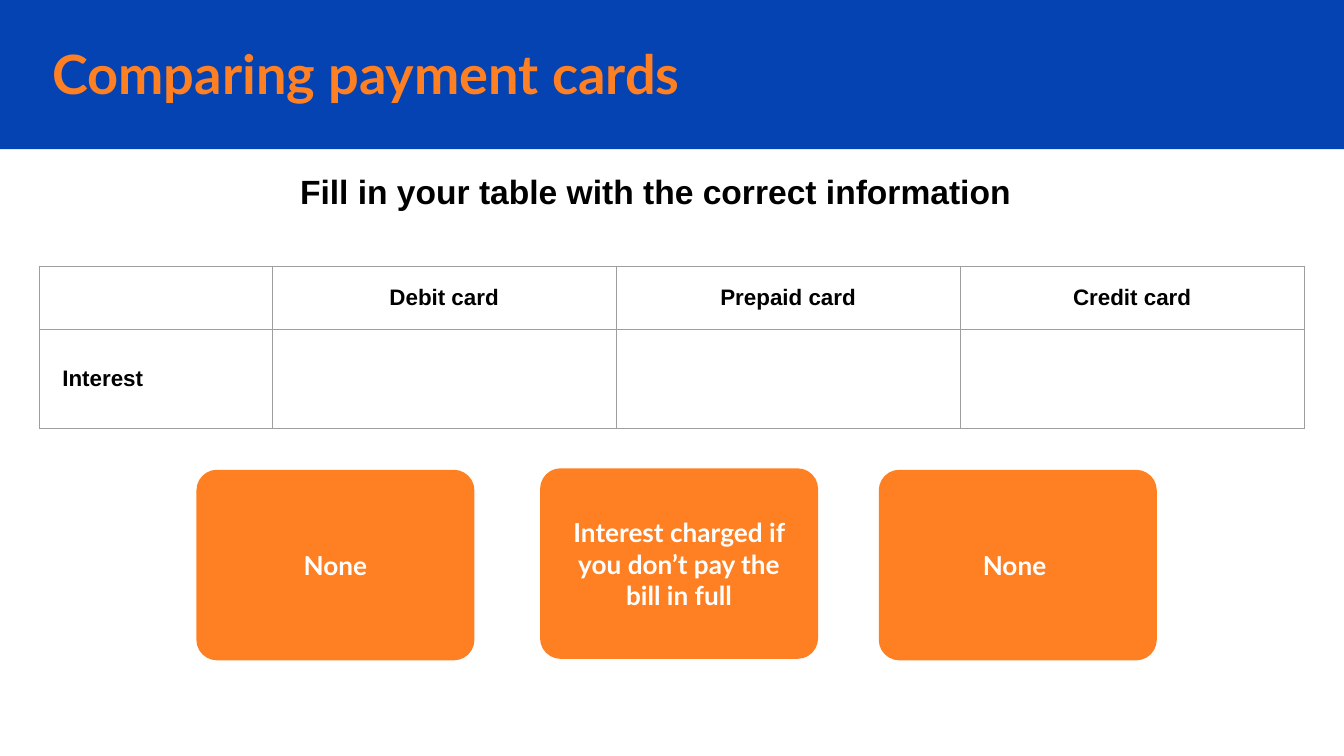
from lxml.etree import SubElement
from pptx import Presentation
from pptx.dml.color import RGBColor as RGB
from pptx.enum.shapes import MSO_SHAPE as SHAPE
from pptx.enum.text import MSO_ANCHOR as ANCHOR, PP_ALIGN as ALIGN
from pptx.oxml.ns import qn
from pptx.util import Inches, Pt

WIDTH = Inches(10)
HEIGHT = WIDTH * 9 // 16
COLORS = {"blue": "0543B3", "orange": "FF8022", "white": "FFFFFF",
          "black": "000000", "grid": "9E9E9E"}
TITLE = {"name": "Lato", "size": Pt(29), "bold": True}
PROMPT = {"name": "Arial", "size": Pt(18), "bold": True}
CELL = {"name": "Arial", "size": Pt(12), "bold": True}
CARD = {"name": "Lato", "size": Pt(14), "bold": True}
SIDES = ("left", "top", "right", "bottom")


def color(name):
    """Return a palette colour."""
    return RGB.from_string(COLORS[name])


def place(x, y, w, h):
    """Turn percentages of the slide into a box of lengths."""
    return [int(size * share / 100) for size, share in
            zip((WIDTH, HEIGHT, WIDTH, HEIGHT), (x, y, w, h))]


def set_margins(target, inset):
    """Give a text frame or table cell equal margins."""
    for side in SIDES:
        setattr(target, f"margin_{side}", Inches(inset))


def write(tf, text, style, ink, align):
    """Write one formatted paragraph."""
    p = tf.paragraphs[0]
    p.alignment = align
    r = p.add_run()
    r.text = text
    for key, value in style.items():
        setattr(r.font, key, value)
    r.font.color.rgb = color(ink)


def add_label(slide, box, text, style, ink, align, anchor):
    """Add a wrapping line of text in a box."""
    tf = slide.shapes.add_textbox(*box).text_frame
    tf.word_wrap = True
    tf.vertical_anchor = anchor
    set_margins(tf, 0.1)
    write(tf, text, style, ink, align)


def add_block(slide, kind, box, fill):
    """Add a flat filled shape without a line."""
    sp = slide.shapes.add_shape(kind, *box)
    sp.shadow.inherit = False
    sp.fill.solid()
    sp.fill.fore_color.rgb = color(fill)
    sp.line.fill.background()
    return sp


def add_header(slide, box):
    """Add the title band."""
    add_block(slide, SHAPE.RECTANGLE, box, "blue")
    x, y, w, h = box
    title_box = [x + int(w * 0.029), y + int(h * 0.24), int(w * 0.846), h // 2]
    add_label(slide, title_box, "Comparing payment cards", TITLE, "orange",
              ALIGN.LEFT, ANCHOR.MIDDLE)


def add_borders(cell):
    """Draw thin lines on all sides of a cell."""
    tc_pr = cell._tc.get_or_add_tcPr()
    for side in "LRTB":
        ln = SubElement(tc_pr, qn(f"a:ln{side}"), w=str(Pt(0.75)))
        fill = SubElement(ln, qn("a:solidFill"))
        SubElement(fill, qn("a:srgbClr"), val=COLORS["grid"])


def add_comparison(slide, box, rows):
    """Add the table with a narrow first column and a short first row."""
    x, y, w, h = box
    table = slide.shapes.add_table(len(rows), len(rows[0]), *box).table
    table.first_row = table.horz_banding = False
    for column, share in zip(table.columns, (0.184, 0.272, 0.272, 0.272)):
        column.width = int(w * share)
    for row, share in zip(table.rows, (0.39, 0.61)):
        row.height = int(h * share)
    for i, texts in enumerate(rows):
        for j, text in enumerate(texts):
            cell = table.cell(i, j)
            cell.vertical_anchor = ANCHOR.MIDDLE
            set_margins(cell, 0.17 if i else 0.05)
            add_borders(cell)
            cell.fill.solid()
            cell.fill.fore_color.rgb = color("white")
            if text:
                write(cell.text_frame, text, CELL, "black",
                      ALIGN.LEFT if i else ALIGN.CENTER)


def add_card(slide, box, text):
    """Add one rounded answer card."""
    sp = add_block(slide, SHAPE.ROUNDED_RECTANGLE, box, "orange")
    sp.adjustments[0] = 0.1
    sp.line.color.rgb = color("orange")
    sp.line.width = Pt(2)
    tf = sp.text_frame
    tf.word_wrap = True
    tf.vertical_anchor = ANCHOR.MIDDLE
    set_margins(tf, 0.1)
    write(tf, text, CARD, "white", ALIGN.CENTER)


def main():
    """Build and save the slide."""
    prs = Presentation()
    prs.slide_width, prs.slide_height = WIDTH, HEIGHT
    slide = prs.slides.add_slide(prs.slide_layouts[6])
    add_header(slide, place(0, 0, 100, 19.75))
    add_label(slide, place(21.14, 20.9, 55.3, 8.9),
              "Fill in your table with the correct information",
              PROMPT, "black", ALIGN.CENTER, ANCHOR.TOP)
    add_comparison(slide, place(2.94, 35.25, 94.1, 21.4), [
        ("", "Debit card", "Prepaid card", "Credit card"),
        ("Interest", "", "", "")])
    cards = ((14.76, 62.4, "None"),
             (40.33, 62.2, "Interest charged if you don’t pay the bill in full"),
             (65.53, 62.4, "None "))
    for x, y, text in cards:
        add_card(slide, place(x, y, 20.4, 24.7), text)
    prs.save("out.pptx")


if __name__ == "__main__":
    main()
